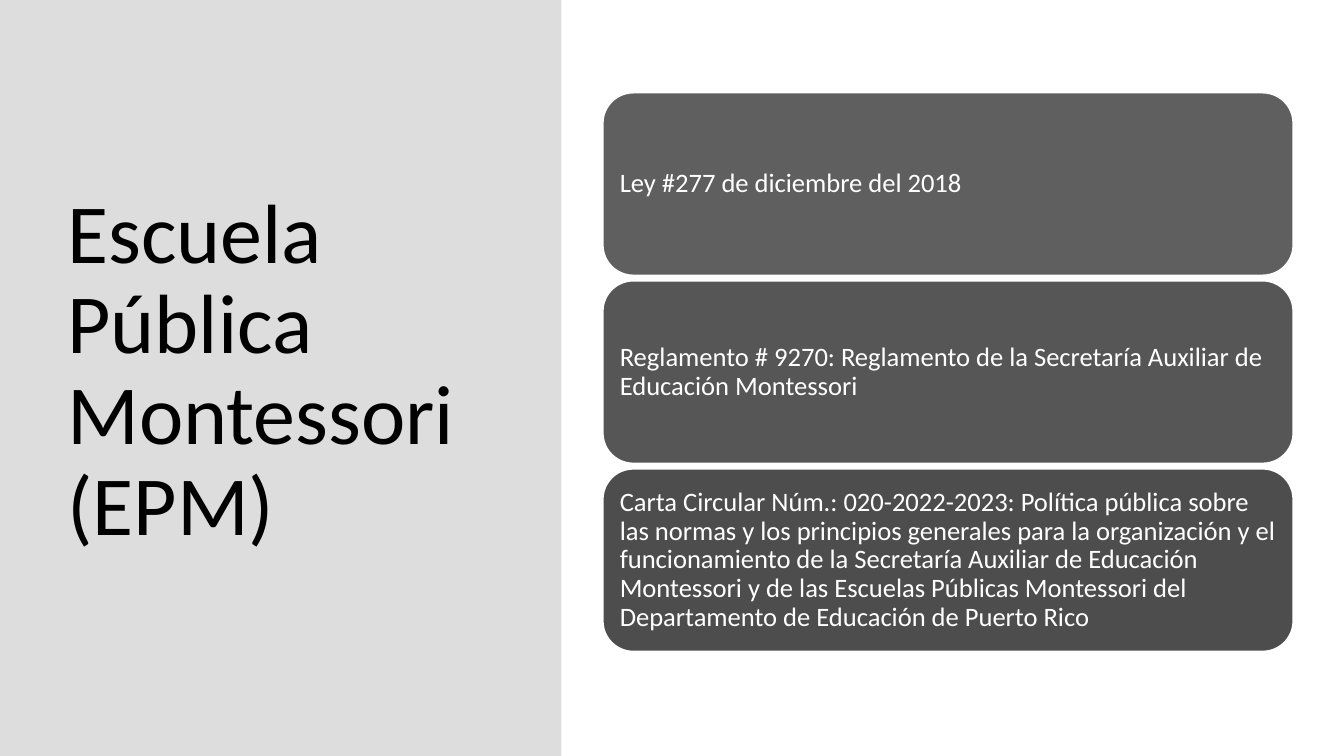
from pptx import Presentation
from pptx.dml.color import RGBColor
from pptx.enum.shapes import MSO_SHAPE as Shape
from pptx.enum.text import MSO_ANCHOR as Anchor, PP_ALIGN as Align
from pptx.util import Pt

FONT = "Calibri"
RULES = [
    ("Ley #277 de diciembre del 2018", "5F5F5F"),
    ("Reglamento # 9270: Reglamento de la Secretaría Auxiliar de "
     "Educación Montessori", "565656"),
    ("Carta Circular Núm.: 020-2022-2023: Política pública sobre las normas "
     "y los principios generales para la organización y el funcionamiento de "
     "la Secretaría Auxiliar de Educación Montessori y de las Escuelas "
     "Públicas Montessori del Departamento de Educación de Puerto Rico",
     "4D4D4D"),
]


def color(value):
    """Turn a hex string into a colour."""
    return RGBColor.from_string(value)


def add_box(slide, kind, left, top, width, height, fill, line=None):
    """Add a flat filled shape with an optional outline."""
    shape = slide.shapes.add_shape(
        kind, Pt(left), Pt(top), Pt(width), Pt(height))
    shape.shadow.inherit = False
    shape.fill.solid()
    shape.fill.fore_color.rgb = color(fill)
    if line:
        shape.line.color.rgb = color(line)
        shape.line.width = Pt(1)
    else:
        shape.line.fill.background()
    return shape


def write(shape, text, size, ink, inset_x, inset_y):
    """Write left-aligned, vertically centred text into a shape."""
    frame = shape.text_frame
    frame.word_wrap = True
    frame.vertical_anchor = Anchor.MIDDLE
    frame.margin_left = frame.margin_right = Pt(inset_x)
    frame.margin_top = frame.margin_bottom = Pt(inset_y)
    paragraph = frame.paragraphs[0]
    paragraph.text = text
    paragraph.alignment = Align.LEFT
    paragraph.line_spacing = 0.9
    for run in paragraph.runs:
        run.font.name = FONT
        run.font.size = Pt(size)
        run.font.color.rgb = color(ink)


def add_title_panel(slide, left, top, width, height):
    """Draw the grey side panel and its title."""
    add_box(slide, Shape.RECTANGLE, left, top, width, height, "DDDDDD")
    title = slide.shapes.add_textbox(
        Pt(left + 41), Pt(top + 49), Pt(308), Pt(height - 106.6))
    write(title, "Escuela Pública Montessori\v(EPM)", 60, "000000", 7.2, 3.6)


def add_rule_cards(slide, left, top, width, height, gap=4):
    """Stack one rounded card per rule in equal rows."""
    card_height = (height - gap * (len(RULES) - 1)) / len(RULES)
    for index, (text, fill) in enumerate(RULES):
        card = add_box(slide, Shape.ROUNDED_RECTANGLE, left,
                       top + index * (card_height + gap), width, card_height,
                       fill, line="FFFFFF")
        write(card, text, 19, "FFFFFF", 5.7, 5.7)


def main():
    """Build and save the slide."""
    presentation = Presentation()
    presentation.slide_width = Pt(960)
    presentation.slide_height = Pt(540)
    slide = presentation.slides.add_slide(presentation.slide_layouts[6])
    add_title_panel(slide, 0, 0, 401, 540)
    add_rule_cards(slide, 430.7, 66.3, 493, 399)
    presentation.save("out.pptx")


if __name__ == "__main__":
    main()
